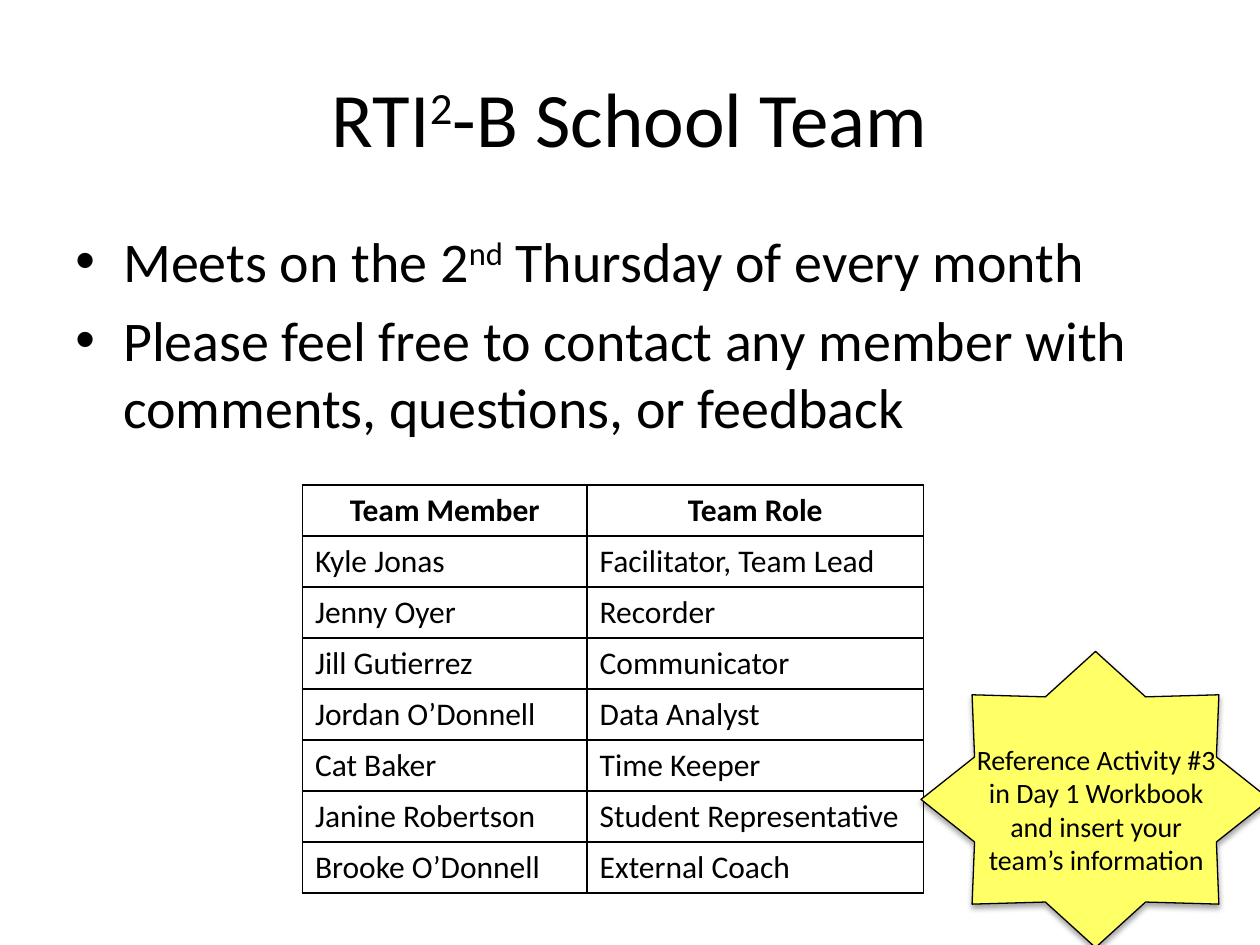
from lxml import etree
from pptx import Presentation, util as u
from pptx.dml.color import RGBColor
from pptx.enum import shapes, text
from pptx.oxml import parse_xml
from pptx.oxml.ns import nsdecls, qn

BLACK = RGBColor(0, 0, 0)
WHITE = RGBColor(255, 255, 255)
YELLOW = RGBColor(0xFF, 0xFF, 0x66)

WIDTH, HEIGHT = 10, 7.5
MARGIN = WIDTH * 0.05
CONTENT_WIDTH = WIDTH - 2 * MARGIN
COLUMN_WIDTHS = (2.26, 2.67)
ROW_HEIGHT = 0.405
INDENT = 0.38

# Each paragraph is a list of (words, is_superscript)
TITLE = [("RTI", False), ("2", True), ("-B School Team", False)]
BULLETS = [
    [("Meets on the 2", False), ("nd", True), (" Thursday of every month", False)],
    [("Please feel free to contact any member with comments, questions, or feedback", False)],
]
TEAM = [
    ("Team Member", "Team Role"),
    ("Kyle Jonas", "Facilitator, Team Lead"),
    ("Jenny Oyer", "Recorder"),
    ("Jill Gutierrez", "Communicator"),
    ("Jordan O’Donnell", "Data Analyst"),
    ("Cat Baker", "Time Keeper"),
    ("Janine Robertson", "Student Representative"),
    ("Brooke O’Donnell", "External Coach"),
]
NOTE = [
    [("Reference Activity #3 in Day 1 Workbook", False)],
    [("and insert your team’s information", False)],
]


def inches(*lengths):
    return [u.Inches(length) for length in lengths]


def write(frame, paragraphs, size, align=text.PP_ALIGN.LEFT, bold=False):
    """Fill a text frame with formatted paragraphs."""
    font_format = {"name": "Calibri", "size": u.Pt(size), "bold": bold}
    for index, spans in enumerate(paragraphs):
        para = frame.paragraphs[0] if index == 0 else frame.add_paragraph()
        para.alignment = align
        for words, is_superscript in spans:
            span = para.add_run()
            span.text = words
            for name, value in font_format.items():
                setattr(span.font, name, value)
            span.font.color.rgb = BLACK
            if is_superscript:
                span._r.get_or_add_rPr().set("baseline", "30000")


def add_title(page):
    title = page.shapes.title
    place = dict(zip(("left", "top", "width", "height"),
                     inches(MARGIN, HEIGHT * 0.04, CONTENT_WIDTH, 1.25)))
    for name, value in place.items():
        setattr(title, name, value)
    title.text_frame.vertical_anchor = text.MSO_ANCHOR.MIDDLE
    write(title.text_frame, [TITLE], 44, text.PP_ALIGN.CENTER)


def add_text(page, area, paragraphs, size, align=text.PP_ALIGN.LEFT):
    frame = page.shapes.add_textbox(*inches(*area)).text_frame
    frame.word_wrap = True
    write(frame, paragraphs, size, align)
    return frame


def add_bullets(frame):
    for para in frame.paragraphs:
        para.space_before = u.Pt(6.4)
        properties = para._p.get_or_add_pPr()
        properties.set("marL", str(u.Inches(INDENT)))
        properties.set("indent", str(-u.Inches(INDENT)))
        etree.SubElement(properties, qn("a:buFont")).set("typeface", "Arial")
        etree.SubElement(properties, qn("a:buChar")).set("char", "•")


def add_borders(cell):
    properties = cell._tc.get_or_add_tcPr()
    for side in "LRTB":
        properties.append(parse_xml(
            f'<a:ln{side} {nsdecls("a")} w="{u.Pt(1)}"><a:solidFill>'
            f'<a:srgbClr val="{BLACK}"/></a:solidFill></a:ln{side}>'))


def add_team_table(page, left, top):
    area = inches(left, top, sum(COLUMN_WIDTHS), ROW_HEIGHT * len(TEAM))
    table = page.shapes.add_table(len(TEAM), len(COLUMN_WIDTHS), *area).table
    for column, width in zip(table.columns, COLUMN_WIDTHS):
        column.width = u.Inches(width)
    for row, entries in enumerate(TEAM):
        is_header = row == 0
        align = text.PP_ALIGN.CENTER if is_header else text.PP_ALIGN.LEFT
        for column, words in enumerate(entries):
            cell = table.cell(row, column)
            add_borders(cell)
            cell.fill.solid()
            cell.fill.fore_color.rgb = WHITE
            write(cell.text_frame, [[(words, False)]], 18, align, is_header)


def add_star(page, area):
    star = page.shapes.add_shape(shapes.MSO_SHAPE.STAR_8_POINT, *inches(*area))
    star.fill.solid()
    star.fill.fore_color.rgb = YELLOW
    star.line.color.rgb = BLACK
    star.line.width = u.Pt(0.75)
    # Soft shadow straight below
    star.shadow.inherit = False
    effects = star._element.spPr.find(qn("a:effectLst"))
    effects.append(parse_xml(
        f'<a:outerShdw {nsdecls("a")} blurRad="{u.Pt(3.1)}" dist="{u.Pt(1.8)}" '
        f'dir="5400000" rotWithShape="0"><a:srgbClr val="{BLACK}">'
        '<a:alpha val="35000"/></a:srgbClr></a:outerShdw>'))


def main():
    deck = Presentation()
    deck.slide_width, deck.slide_height = inches(WIDTH, HEIGHT)
    page = deck.slides.add_slide(deck.slide_layouts[5])

    # Title and bullets
    add_title(page)
    add_bullets(add_text(page, (MARGIN, 1.75, CONTENT_WIDTH, 4.95), BULLETS, 32))

    # Team table
    add_team_table(page, 2.4, 3.85)

    # Star with its note
    add_star(page, (7.31, 5.17, 2.77, 2.35))
    add_text(page, (7.64, 5.84, 2.12, 1.18), NOTE, 16, text.PP_ALIGN.CENTER)

    deck.save("out.pptx")


if __name__ == "__main__":
    main()
